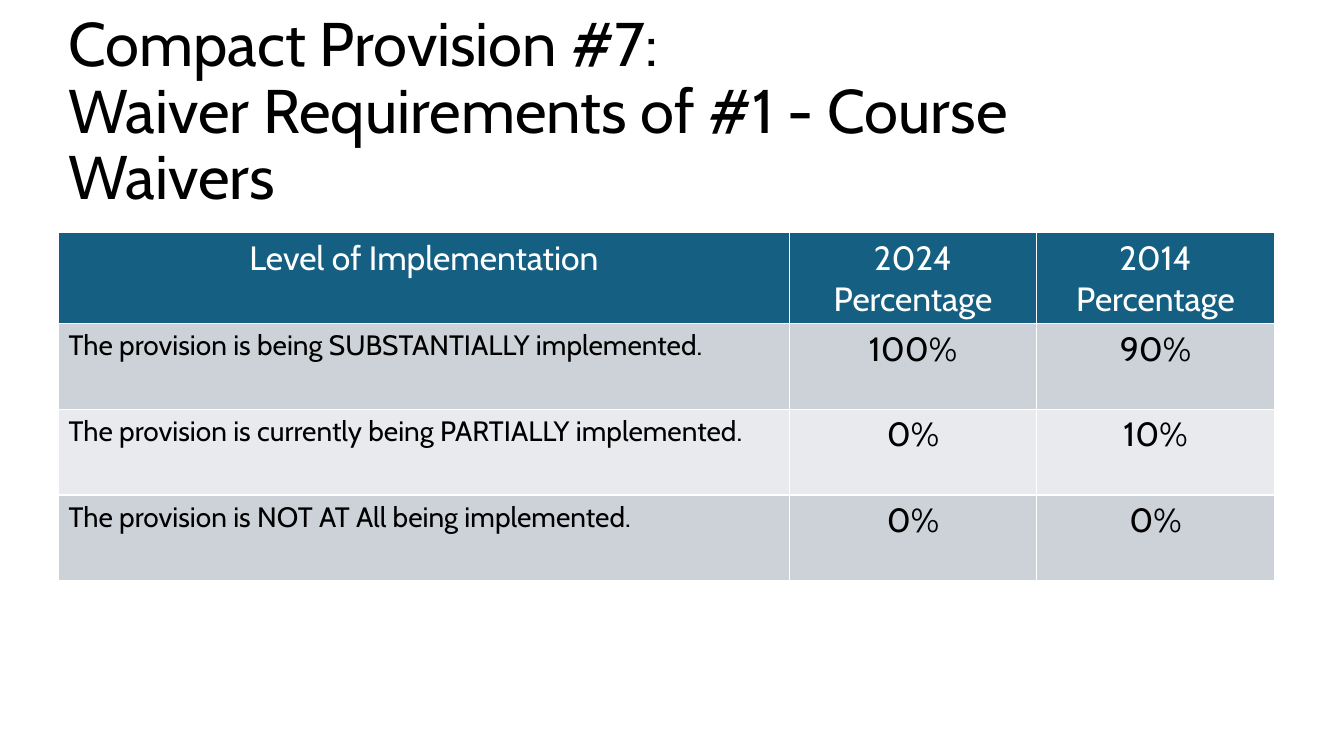
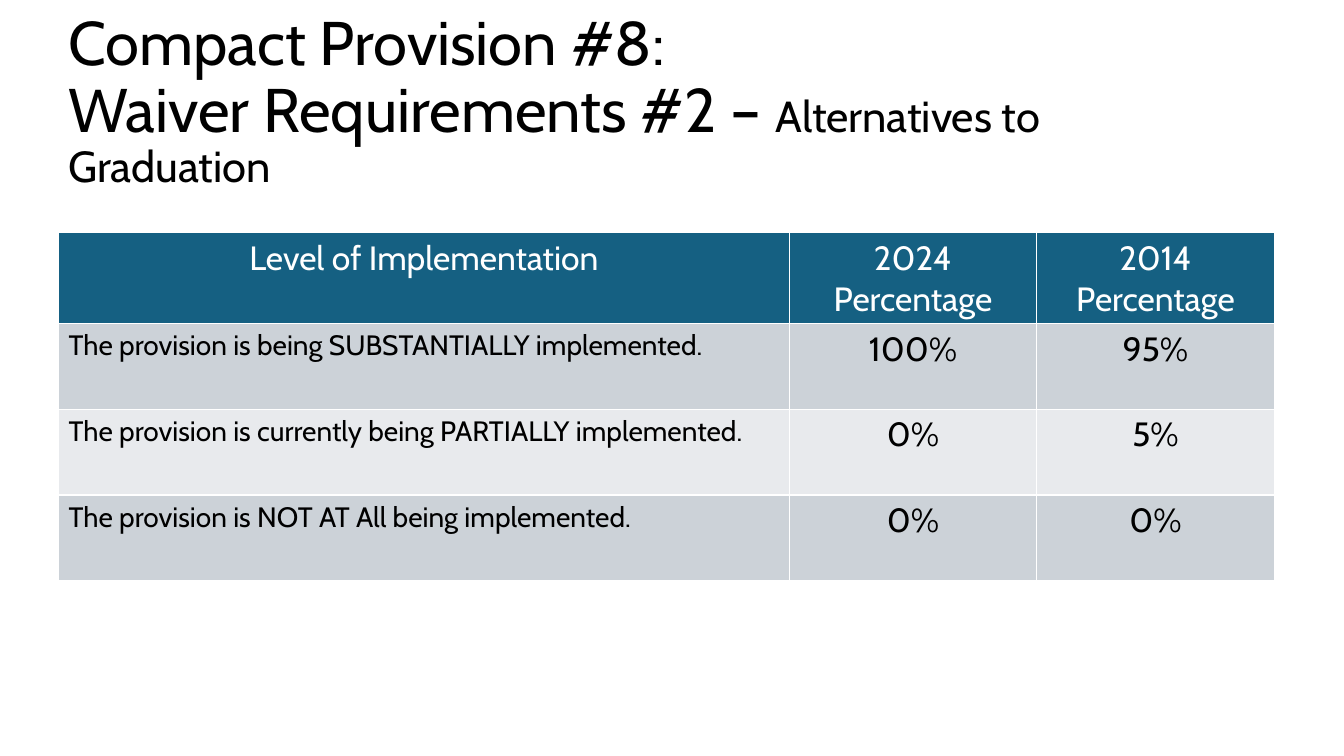
from dataclasses import dataclass

from lxml.etree import SubElement
from pptx import Presentation
from pptx.dml.color import RGBColor as RGB
from pptx.enum.text import MSO_ANCHOR as ANCHOR, PP_ALIGN as ALIGN
from pptx.oxml.ns import qn
from pptx.util import Emu, Pt


@dataclass(frozen=True)
class Theme:
    font: str = "Cabin"
    ink: str = "000000"
    white: str = "FFFFFF"
    header: str = "156082"
    bands: tuple = ("CCD2D8", "E8EAED")
    title: int = 44
    subtitle: int = 31
    figure: int = 24
    label: int = 20
    rule: int = 1


T = Theme()
SLIDE = (1333, 750)
TITLE_SIZE = (1150, 145)
TABLE_AT = (58, 231)
COLS = (725, 245, 236)
ROWS = (90, 85, 85, 85)
HEADER = ("Level of Implementation", "2024 Percentage", "2014 Percentage")
LEVELS = (
    "The provision is being SUBSTANTIALLY implemented.",
    "The provision is currently being PARTIALLY implemented.",
    "The provision is NOT AT All being implemented.",
)
PROVISIONS = (
    ((58, 40), "Compact Provision #7:", "Waiver Requirements of #1 - Course Waivers", "",
     (("100%", "90%"), ("0%", "10%"), ("0%", "0%"))),
    ((58, 29), "Compact Provision #8:", "Waiver Requirements #2 – ", "Alternatives to Graduation",
     (("100%", "95%"), ("0%", "5%"), ("0%", "0%"))),
)


def px(n):
    return Emu(n * 9144)


def style(font, size, color):
    font.name = T.font
    font.size = Pt(size)
    font.bold = False
    font.color.rgb = RGB.from_string(color)


def add_title(s, box, heading, topic, detail):
    tf = s.shapes.add_textbox(*map(px, box)).text_frame
    tf.word_wrap = True
    tf.vertical_anchor = ANCHOR.MIDDLE
    p = tf.paragraphs[0]
    p.line_spacing = 0.9
    style(p.font, T.title, T.ink)
    p.add_run().text = heading
    p.add_line_break()
    p.add_run().text = topic
    if detail:
        r = p.add_run()
        r.text = detail
        r.font.size = Pt(T.subtitle)


def add_borders(cell):
    tc_pr = cell._tc.get_or_add_tcPr()
    for i, side in enumerate(("lnL", "lnR", "lnT", "lnB")):
        ln = SubElement(tc_pr, qn(f"a:{side}"), w=str(Pt(T.rule)))
        SubElement(SubElement(ln, qn("a:solidFill")), qn("a:srgbClr"), val=T.white)
        tc_pr.insert(i, ln)


def fill_cell(cell, text, fill, size, color, align):
    cell.fill.solid()
    cell.fill.fore_color.rgb = RGB.from_string(fill)
    add_borders(cell)
    p = cell.text_frame.paragraphs[0]
    p.text = text
    p.alignment = align
    style(p.font, size, color)


def add_levels_table(s, at, figures):
    box = (*at, sum(COLS), sum(ROWS))
    table = s.shapes.add_table(len(ROWS), len(COLS), *map(px, box)).table
    table.first_row = table.horz_banding = False
    for col, width in zip(table.columns, COLS):
        col.width = px(width)
    for row, height in zip(table.rows, ROWS):
        row.height = px(height)
    for c, text in enumerate(HEADER):
        fill_cell(table.cell(0, c), text, T.header, T.figure, T.white, ALIGN.CENTER)
    for i, (level, values) in enumerate(zip(LEVELS, figures)):
        band = T.bands[i % 2]
        fill_cell(table.cell(i + 1, 0), level, band, T.label, T.ink, ALIGN.LEFT)
        for c, value in enumerate(values, 1):
            fill_cell(table.cell(i + 1, c), value, band, T.figure, T.ink, ALIGN.CENTER)


def add_provision_slide(prs, title_at, heading, topic, detail, figures):
    s = prs.slides.add_slide(prs.slide_layouts[6])
    add_title(s, (*title_at, *TITLE_SIZE), heading, topic, detail)
    add_levels_table(s, TABLE_AT, figures)


def main():
    prs = Presentation()
    prs.slide_width, prs.slide_height = map(px, SLIDE)
    for provision in PROVISIONS:
        add_provision_slide(prs, *provision)
    prs.save("out.pptx")


if __name__ == "__main__":
    main()
